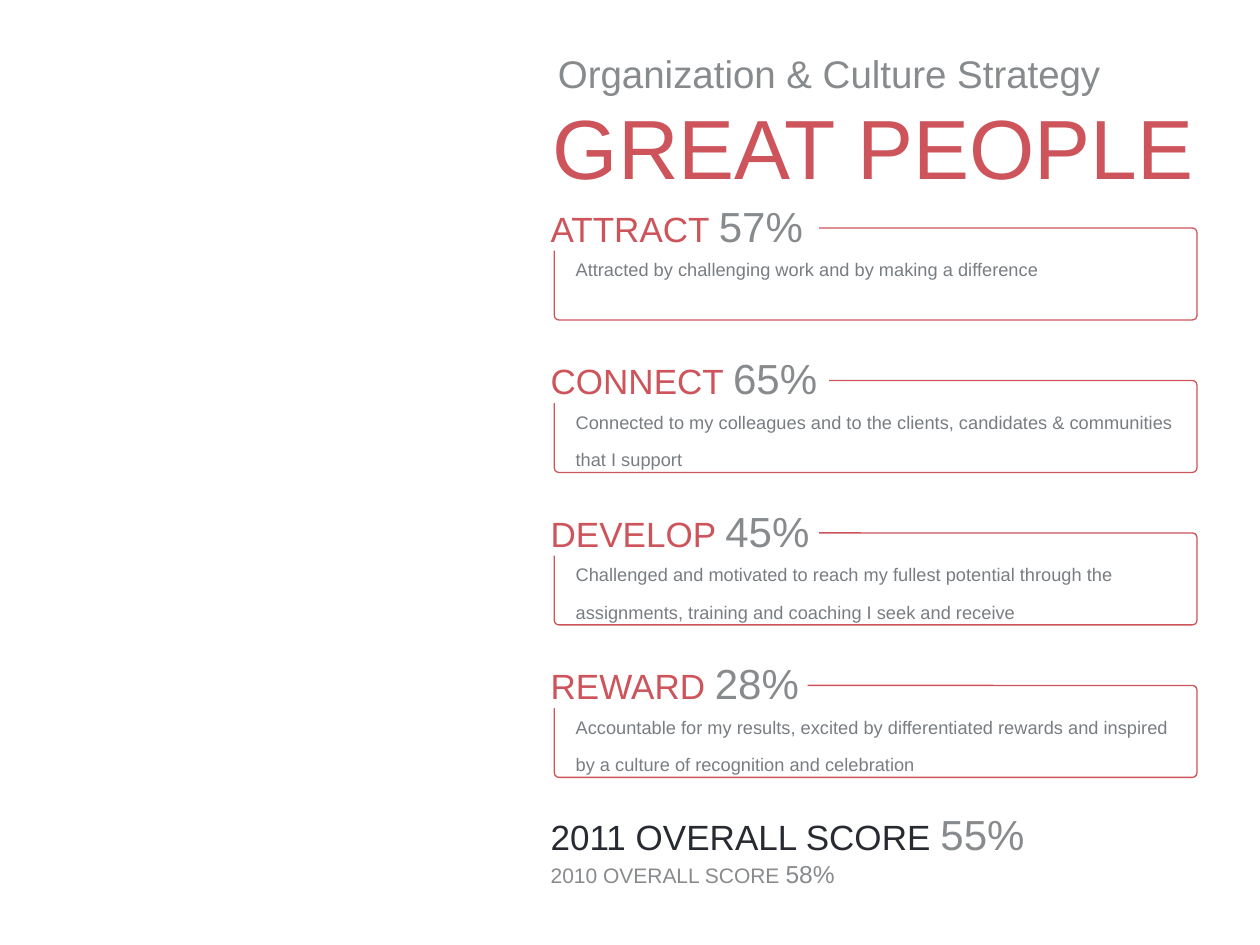
"""Build the Great People slide with four scored strategy cards and an overall score."""
from pptx import Presentation, util as u
from pptx.dml.color import RGBColor
from pptx.enum import shapes, text

RED, GRAY, SLATE, INK, WHITE = "CD545B", "888B8D", "787D82", "282A32", "FFFFFF"
LEFT, CARD_LEFT, CARD_WIDTH, CARD_HEIGHT = 4.32, 4.4, 5.1, 0.73
FIRST_ROW, ROW_STEP, LABEL_RISE = 1.81, 1.21, 0.22

deck = Presentation()
deck.slide_width, deck.slide_height = u.Inches(10), u.Inches(7.5)
page = deck.slides.add_slide(deck.slide_layouts[6])


def add_span(para, wording, size, color, baseline=0):
    span = para.add_run()
    span.text = wording
    span.font.name, span.font.size = "Arial", u.Pt(size)
    span.font.color.rgb = RGBColor.from_string(color)
    if baseline:
        span.font._element.set("baseline", str(baseline * 1000))


def add_block(lines, place, kind=None, line=None, insets=(0.1, 0.05, 0.1, 0.05),
              grow=True, indent=0, spacing=None, baseline=0):
    place = [u.Inches(length) for length in place]
    if kind is None:
        box = page.shapes.add_textbox(*place)
    else:
        box = page.shapes.add_shape(kind, *place)
        box.shadow.inherit = False
        box.fill.solid()
        box.fill.fore_color.rgb = RGBColor.from_string(WHITE)
        if line:
            box.line.color.rgb = RGBColor.from_string(line)
            box.line.width = u.Pt(0.75)
        else:
            box.line.fill.background()
        if len(box.adjustments):
            box.adjustments[0] = 0.05
    frame = box.text_frame
    frame.word_wrap = True
    frame.vertical_anchor = text.MSO_ANCHOR.TOP
    frame.auto_size = text.MSO_AUTO_SIZE.SHAPE_TO_FIT_TEXT if grow else text.MSO_AUTO_SIZE.NONE
    frame.margin_left, frame.margin_top, frame.margin_right, frame.margin_bottom = map(u.Inches, insets)
    for index, spans in enumerate(lines):
        para = frame.add_paragraph() if index else frame.paragraphs[0]
        para.alignment = text.PP_ALIGN.LEFT
        if spacing:
            para.line_spacing = spacing
        if indent:
            para._p.get_or_add_pPr().set("marL", str(u.Inches(indent)))
        for wording, size, color in spans:
            add_span(para, wording, size, color, baseline)


add_block([[("GREAT PEOPLE", 48, RED)]], (4.29, 0.68, 5.62, 0.8), spacing=1.04)
add_block([[("Organization & Culture Strategy", 22, GRAY)]], (4.33, 0.35, 5.62, 0.47))

cards = [
    ("ATTRACT", "57%", 2.18, "Attracted by challenging work and by making a difference"),
    ("CONNECT", "65%", 2.26, "Connected to my colleagues and to the clients, candidates & communities that I support"),
    ("DEVELOP", "45%", 2.18, "Challenged and motivated to reach my fullest potential through the assignments, "
     "training and coaching I seek and receive"),
    ("REWARD", "28%", 2.09, "Accountable for my results, excited by differentiated rewards and inspired "
     "by a culture of recognition and celebration"),
]
label_format = dict(kind=shapes.MSO_SHAPE.RECTANGLE, insets=(0.05, 0, 0.05, 0))
for row, (title, score, label_width, message) in enumerate(cards):
    top = FIRST_ROW + row * ROW_STEP
    add_block([[(message, 18, SLATE)]], (CARD_LEFT, top, CARD_WIDTH, CARD_HEIGHT),
              kind=shapes.MSO_SHAPE.ROUNDED_RECTANGLE, line=RED, insets=(0.1, 0.2, 0.1, 0.05),
              grow=False, indent=0.06, baseline=30)
    add_block([[(title + " ", 20, RED), (score, 24, GRAY)]],
              (LEFT, top - LABEL_RISE, label_width, 0.4), **label_format)

add_block([[("2011 OVERALL SCORE ", 20, INK), ("55%", 24, GRAY)],
           [("2010 OVERALL SCORE ", 12, GRAY), ("58%", 14, GRAY)]],
          (LEFT, 6.42, 4.09, 0.6), **label_format)

deck.save("out.pptx")
